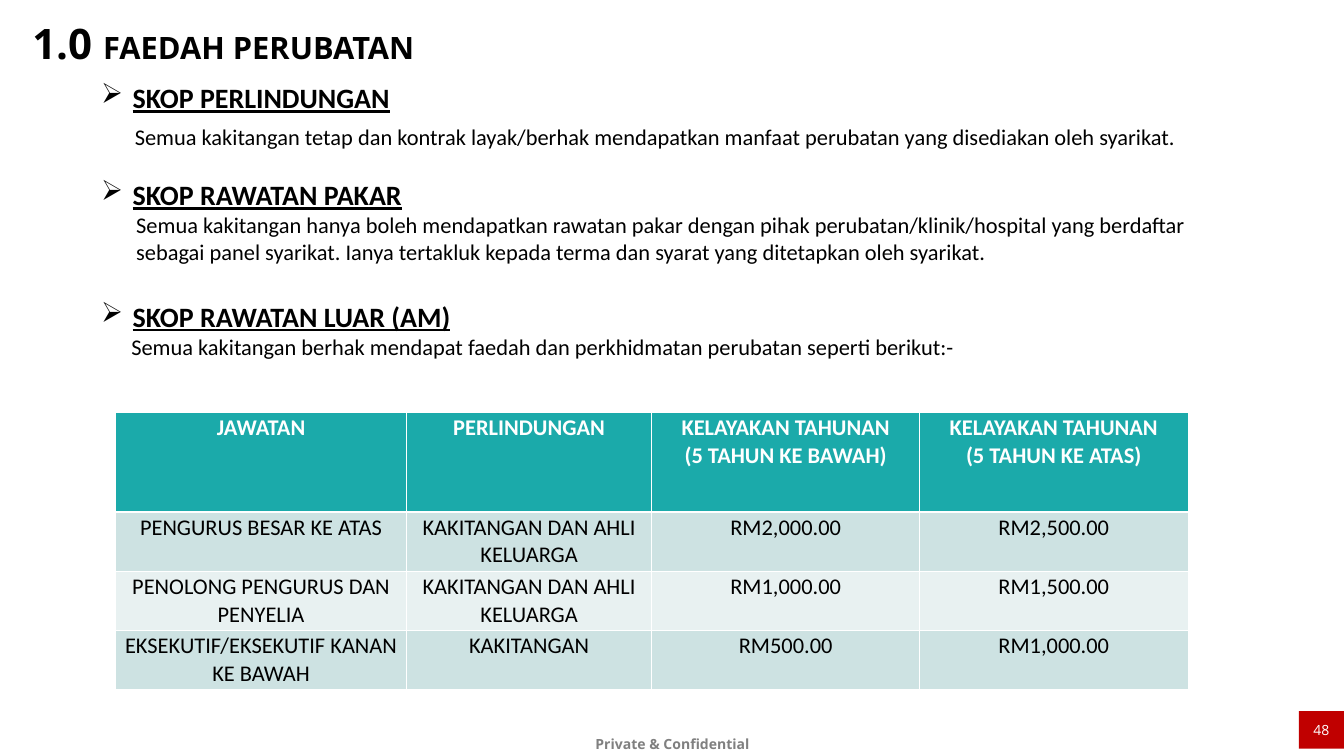
"""Build the medical benefits slide with its coverage sections and entitlement table."""
from lxml.etree import SubElement
from pptx import Presentation
from pptx.dml.color import RGBColor
from pptx.enum.shapes import MSO_SHAPE as Shape
from pptx.enum.text import MSO_ANCHOR as Anchor, PP_ALIGN as Align
from pptx.oxml.ns import qn
from pptx.util import Pt

BLACK = RGBColor(0x00, 0x00, 0x00)
WHITE = RGBColor(0xFF, 0xFF, 0xFF)
GREY = RGBColor(0x80, 0x80, 0x80)
RED = RGBColor(0xC0, 0x00, 0x00)
TEAL = RGBColor(0x1B, 0xAA, 0xAA)
BANDS = [RGBColor(0xCD, 0xE2, 0xE2), RGBColor(0xE8, 0xF1, 0xF1)]


def add_run(paragraph, text, size=32, font="Calibri", color=BLACK, bold=False, underline=False):
    run = paragraph.add_run()
    run.text = text
    run.font.size = Pt(size)
    run.font.name = font
    run.font.color.rgb = color
    run.font.bold = bold
    run.font.underline = underline


def add_border(cell, side, width):
    line = SubElement(cell._tc.get_or_add_tcPr(), qn(f"a:ln{side}"), w=str(Pt(width)))
    fill = SubElement(line, qn("a:solidFill"))
    SubElement(fill, qn("a:srgbClr"), val=str(WHITE))


presentation = Presentation()
presentation.slide_width = Pt(1920)
presentation.slide_height = Pt(1080)
slide = presentation.slides.add_slide(presentation.slide_layouts[6])

footer = slide.shapes.add_textbox(Pt(830), Pt(1038), Pt(261.5), Pt(56)).text_frame
footer.word_wrap = True
footer.margin_left = footer.margin_right = Pt(17)
footer.margin_top = footer.margin_bottom = Pt(8.64)
paragraph = footer.paragraphs[0]
paragraph.alignment = Align.CENTER
paragraph.line_spacing = 1.2
add_run(paragraph, "Private & Confidential", size=20, font="Open Sans", color=GREY, bold=True)

page_box = slide.shapes.add_shape(Shape.RECTANGLE, Pt(1855.5), Pt(1016), Pt(64.5), Pt(53.5))
page_box.shadow.inherit = False
page_box.fill.solid()
page_box.fill.fore_color.rgb = RED
page_box.line.fill.background()
page_frame = page_box.text_frame
page_frame.vertical_anchor = Anchor.MIDDLE
page_frame.margin_left = page_frame.margin_right = 0
page_frame.margin_top = page_frame.margin_bottom = Pt(14)
paragraph = page_frame.paragraphs[0]
paragraph.alignment = Align.CENTER
add_run(paragraph, "48", size=20, font="Open Sans", color=WHITE)

title = slide.shapes.add_textbox(Pt(39), Pt(21.5), Pt(1658), Pt(90)).text_frame
title.word_wrap = True
for text, size in [("1.0 ", 60), ("FAEDAH PERUBATAN", 44)]:
    add_run(title.paragraphs[0], text, size=size, font="Open Sans", bold=True)

sections = [
    ("SKOP PERLINDUNGAN", 0, 48, 13, [
        "Semua kakitangan tetap dan kontrak layak/berhak mendapatkan manfaat perubatan yang disediakan oleh syarikat.",
    ]),
    ("SKOP RAWATAN PAKAR", 39, 50, 0, [
        "Semua kakitangan hanya boleh mendapatkan rawatan pakar dengan pihak perubatan/klinik/hospital yang berdaftar",
        "sebagai panel syarikat. Ianya tertakluk kepada terma dan syarat yang ditetapkan oleh syarikat.",
    ]),
    ("SKOP RAWATAN LUAR (AM)", 49, 43, 0, [
        "Semua kakitangan berhak mendapat faedah dan perkhidmatan perubatan seperti berikut:-",
    ]),
]
scope = slide.shapes.add_textbox(Pt(137.5), Pt(111.5), Pt(1597.5), Pt(408)).text_frame
scope.word_wrap = True
paragraph = scope.paragraphs[0]
for heading, heading_gap, body_indent, body_gap, lines in sections:
    if heading_gap:
        paragraph = scope.add_paragraph()
        paragraph.space_before = Pt(heading_gap)
    properties = paragraph._p.get_or_add_pPr()
    properties.set("marL", str(Pt(45)))
    properties.set("indent", str(-Pt(45)))
    SubElement(properties, qn("a:buChar"), char="➢")
    add_run(paragraph, heading, size=40, bold=True, underline=True)
    for index, line in enumerate(lines):
        paragraph = scope.add_paragraph()
        paragraph._p.get_or_add_pPr().set("marL", str(Pt(body_indent)))
        if index == 0 and body_gap:
            paragraph.space_before = Pt(body_gap)
        add_run(paragraph, line)

rows = [
    ["JAWATAN", "PERLINDUNGAN", "KELAYAKAN TAHUNAN\n(5 TAHUN KE BAWAH)", "KELAYAKAN TAHUNAN\n(5 TAHUN KE ATAS)"],
    ["PENGURUS BESAR KE ATAS", "KAKITANGAN DAN AHLI KELUARGA", "RM2,000.00", "RM2,500.00"],
    ["PENOLONG PENGURUS DAN PENYELIA", "KAKITANGAN DAN AHLI KELUARGA", "RM1,000.00", "RM1,500.00"],
    ["EKSEKUTIF/EKSEKUTIF KANAN KE BAWAH", "KAKITANGAN", "RM500.00", "RM1,000.00"],
]
column_widths = [416, 350, 383, 383]
row_heights = [142.5, 84.5, 84.5, 84.5]
table = slide.shapes.add_table(
    len(rows), len(column_widths), Pt(165), Pt(588.5), Pt(sum(column_widths)), Pt(sum(row_heights))
).table
for column, width in zip(table.columns, column_widths):
    column.width = Pt(width)
for row_index, (row, height) in enumerate(zip(rows, row_heights)):
    table.rows[row_index].height = Pt(height)
    is_header = row_index == 0
    for column_index, text in enumerate(row):
        cell = table.cell(row_index, column_index)
        for side in "LRTB":
            thick = (is_header and side == "B") or (row_index == 1 and side == "T")
            add_border(cell, side, 3 if thick else 1)
        cell.fill.solid()
        cell.fill.fore_color.rgb = TEAL if is_header else BANDS[(row_index - 1) % 2]
        for line_index, line in enumerate(text.split("\n")):
            frame = cell.text_frame
            paragraph = frame.add_paragraph() if line_index else frame.paragraphs[0]
            paragraph.alignment = Align.CENTER
            add_run(paragraph, line, color=WHITE if is_header else BLACK, bold=is_header)

presentation.save("out.pptx")
